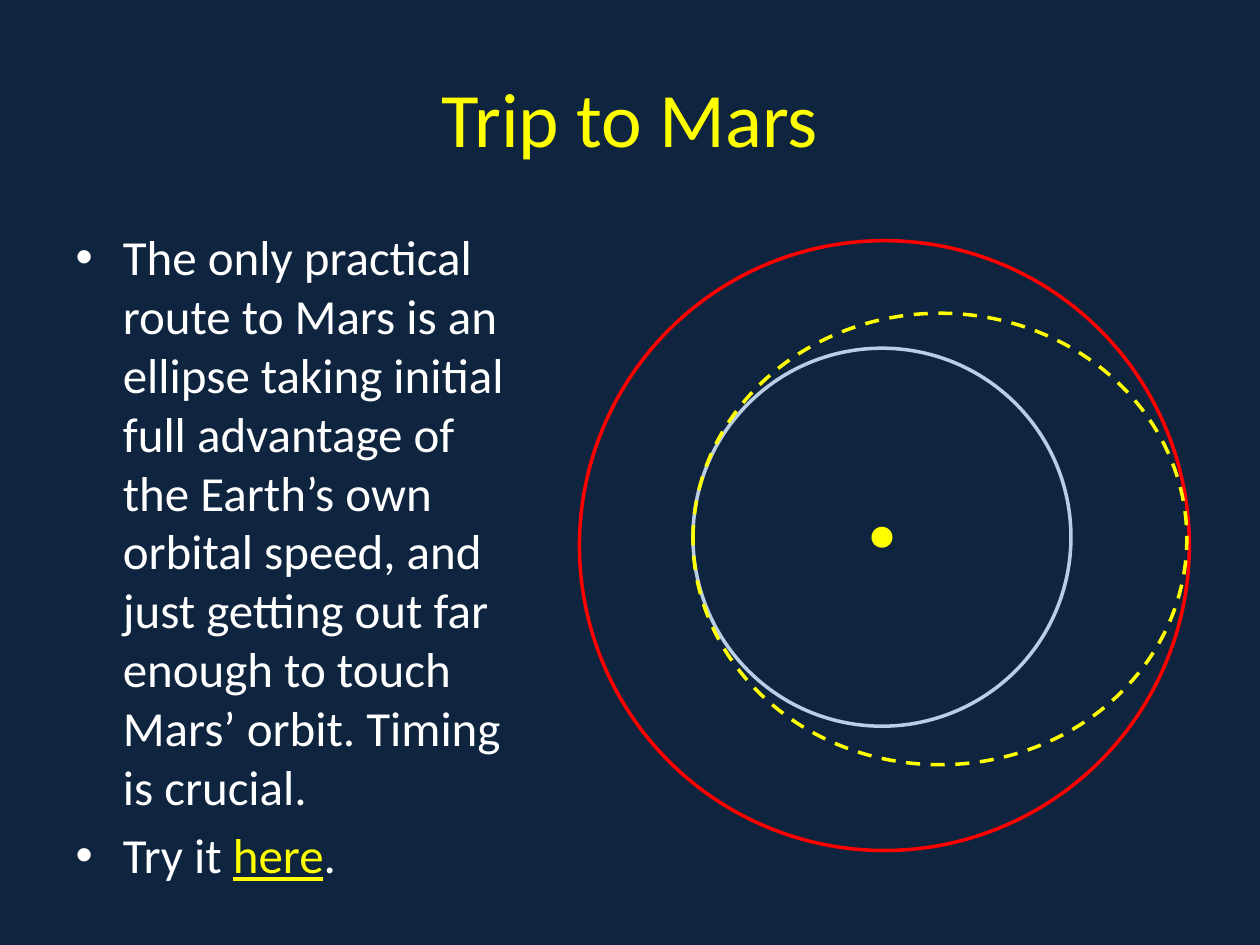
import dataclasses

import pptx
import pptx.dml.color
import pptx.enum.dml
import pptx.enum.shapes
import pptx.enum.text
import pptx.util

Pt = pptx.util.Pt


@dataclasses.dataclass(frozen=True)
class Theme:
    font: str = "Calibri"
    background: str = "0F243E"
    accent: str = "FFFF00"
    text: str = "FFFFFF"
    earth: str = "B9CDE5"
    mars: str = "FF0000"
    title_size: float = 44
    body_size: float = 28
    orbit_width: float = 2


THEME = Theme()


def rgb(value):
    return pptx.dml.color.RGBColor.from_string(value)


def add_text(paragraph, text, *, size, color, underline=None):
    run = paragraph.add_run()
    run.text = text
    run.font.name = THEME.font
    run.font.size = Pt(size)
    run.font.color.rgb = rgb(color)
    run.font.underline = underline


def place(placeholder, left, top, width, height):
    placeholder.left, placeholder.top = Pt(left), Pt(top)
    placeholder.width, placeholder.height = Pt(width), Pt(height)
    placeholder.text_frame.auto_size = pptx.enum.text.MSO_AUTO_SIZE.NONE
    return placeholder.text_frame


def add_ellipse(slide, center_x, center_y, width, height):
    ellipse = slide.shapes.add_shape(
        pptx.enum.shapes.MSO_SHAPE.OVAL,
        Pt(center_x - width / 2), Pt(center_y - height / 2), Pt(width), Pt(height))
    ellipse.shadow.inherit = False
    return ellipse


def add_sun(slide, center_x, center_y, diameter):
    sun = add_ellipse(slide, center_x, center_y, diameter, diameter)
    sun.fill.solid()
    sun.fill.fore_color.rgb = rgb(THEME.accent)
    sun.line.fill.background()


def add_orbit(slide, center_x, center_y, width, height, color, dash=None):
    orbit = add_ellipse(slide, center_x, center_y, width, height)
    orbit.fill.background()
    orbit.line.color.rgb = rgb(color)
    orbit.line.width = Pt(THEME.orbit_width)
    orbit.line.dash_style = dash


def add_title(slide, text):
    frame = place(slide.shapes.title, 36, 21.6, 648, 90)
    frame.vertical_anchor = pptx.enum.text.MSO_ANCHOR.MIDDLE
    heading = frame.paragraphs[0]
    heading.alignment = pptx.enum.text.PP_ALIGN.CENTER
    add_text(heading, text, size=THEME.title_size, color=THEME.accent)


def add_bullets(slide, bullets):
    frame = place(slide.placeholders[1], 36, 126, 270, 396)
    for index, pieces in enumerate(bullets):
        bullet = frame.add_paragraph() if index else frame.paragraphs[0]
        for text, linked in pieces:
            add_text(bullet, text, size=THEME.body_size,
                     color=THEME.accent if linked else THEME.text,
                     underline=linked)


def main():
    deck = pptx.Presentation()
    deck.slide_width, deck.slide_height = Pt(720), Pt(540)
    slide = deck.slides.add_slide(deck.slide_layouts[1])
    slide.background.fill.solid()
    slide.background.fill.fore_color.rgb = rgb(THEME.background)

    add_title(slide, "Trip to Mars")
    add_bullets(slide, [
        [("The only practical route to Mars is an ellipse taking initial full "
          "advantage of the Earth’s own orbital speed, and just getting out far "
          "enough to touch Mars’ orbit. Timing is crucial.", False)],
        [("Try it ", False), ("here", True), (".", False)],
    ])

    add_sun(slide, 504, 307, 12)
    add_orbit(slide, 504, 307, 216, 216, THEME.earth)
    add_orbit(slide, 505.4, 311.8, 348.5, 348.5, THEME.mars)
    add_orbit(slide, 537.1, 308, 282.2, 258, THEME.accent,
              pptx.enum.dml.MSO_LINE.DASH)

    deck.save("out.pptx")


if __name__ == "__main__":
    main()
